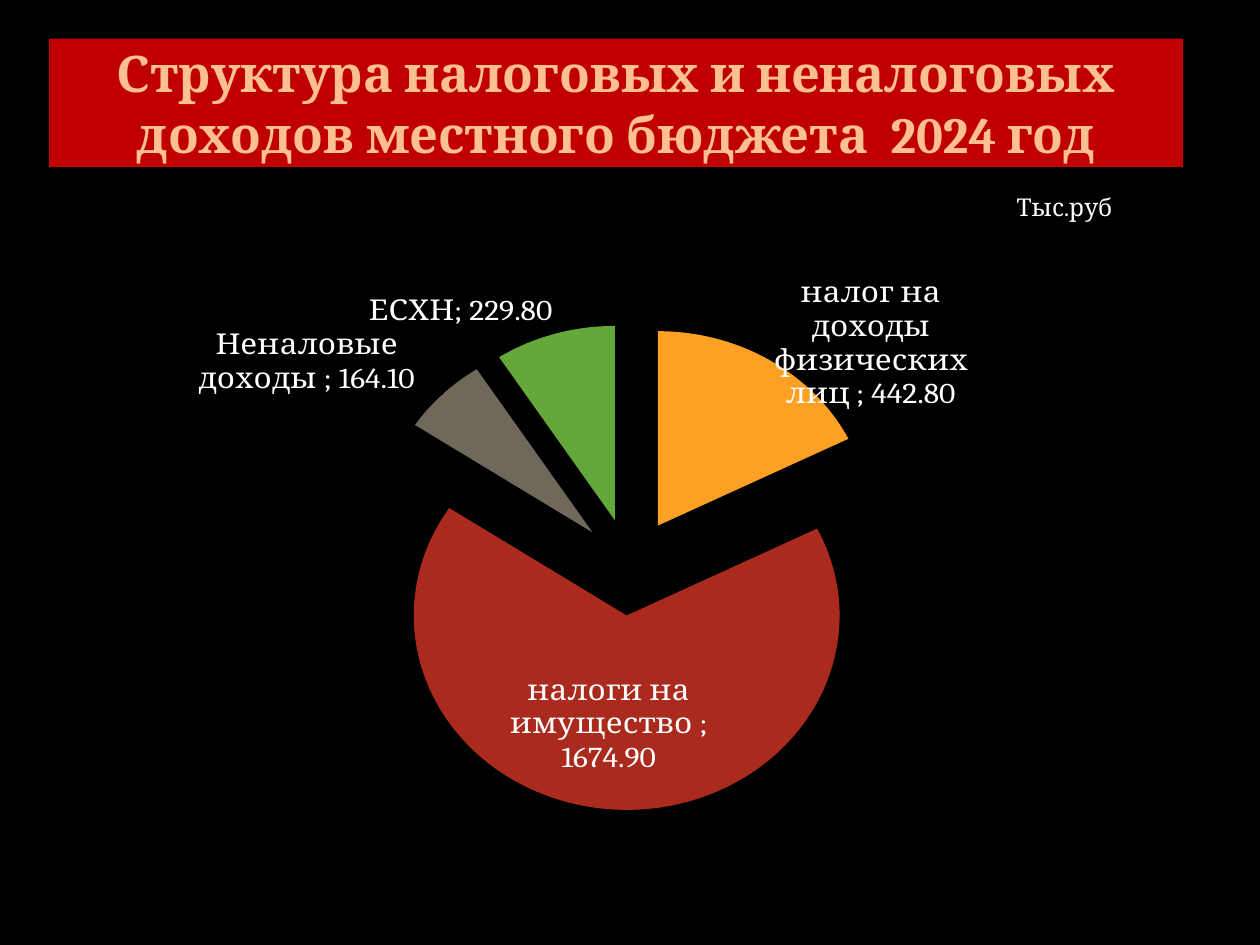
from typing import NamedTuple

from lxml.etree import SubElement
from pptx import Presentation
from pptx.chart.data import CategoryChartData
from pptx.dml.color import RGBColor
from pptx.enum.chart import XL_CHART_TYPE as ChartType, XL_LABEL_POSITION as LabelPosition
from pptx.enum.text import MSO_ANCHOR as Anchor, PP_ALIGN as Align
from pptx.oxml.ns import qn
from pptx.util import Inches, Pt

WIDTH, HEIGHT = Inches(10), Inches(7.5)
FONT = "Cambria"
NUMBER_FORMAT = "0.00"
EXPLOSION = 25
COLORS = {
    "background": "000000",
    "banner": "C00000",
    "title": "FFC091",
    "text": "FFFFFF",
    "income": "FDA023",
    "property": "AA2B1E",
    "non_tax": "71685C",
    "farm": "64A73B",
}


class Area(NamedTuple):
    """A rectangle in shares of the slide's size."""
    left: float
    top: float
    width: float
    height: float

    def emu(self) -> tuple[int, ...]:
        return tuple(round(share * side) for share, side in zip(self, (WIDTH, HEIGHT) * 2))


class Slice(NamedTuple):
    name: str
    value: float
    color: str
    position: LabelPosition
    shift: tuple[float, float]


BANNER = Area(0.039, 0.041, 0.9, 0.136)
UNIT = Area(0.797, 0.197, 0.133, 0.045)
CHART = Area(0.05, 0.233, 0.9, 0.687)
PLOT = {"x": 0.08, "y": 0.08, "w": 0.84, "h": 0.82}
OUTSIDE, CENTER = LabelPosition.OUTSIDE_END, LabelPosition.CENTER
SLICES = [
    Slice("налог на доходы физических лиц ", 442.8, "income", OUTSIDE, (0, 0.07)),
    Slice("налоги на имущество ", 1674.9, "property", CENTER, (-0.01, 0.02)),
    Slice("Неналовые доходы ", 164.1, "non_tax", OUTSIDE, (-0.02, 0.01)),
    Slice("ЕСХН", 229.8, "farm", OUTSIDE, (0, 0)),
]


def color(name: str) -> RGBColor:
    return RGBColor.from_string(COLORS[name])


def style_font(font, *, size: float, ink: str = "text", bold: bool = False) -> None:
    font.name, font.size, font.bold = FONT, Pt(size), bold
    font.color.rgb = color(ink)


def write(shape, text: str, *, size: float, ink: str = "text", bold: bool = False,
          align: Align = Align.LEFT, anchor: Anchor = Anchor.TOP) -> None:
    frame = shape.text_frame
    frame.word_wrap, frame.vertical_anchor = True, anchor
    para = frame.paragraphs[0]
    para.alignment = align
    span = para.add_run()
    span.text = text
    style_font(span.font, size=size, ink=ink, bold=bold)


def add_xml(parent, tag: str, index: int | None = None, text: str | None = None, **attributes: str):
    child = SubElement(parent, qn(tag), attributes)
    child.text = text
    if index is not None:
        parent.insert(index, child)
    return child


def add_layout(parent, index: int, **shares: float) -> None:
    """Place a chart part by shares of the chart's size."""
    for old in parent.findall(qn("c:layout")):
        parent.remove(old)
    manual = add_xml(add_xml(parent, "c:layout", index), "c:manualLayout")
    if "w" in shares:
        add_xml(manual, "c:layoutTarget", val="inner")
        for mode in ("xMode", "yMode"):
            add_xml(manual, f"c:{mode}", val="edge")
    for name, share in shares.items():
        add_xml(manual, f"c:{name}", val=str(share))


def show_name_and_value(labels) -> None:
    """Show category and value, split by a semicolon."""
    for tag in ("c:showCatName", "c:showVal"):
        labels.find(qn(tag)).set("val", "1")
    last_flag = labels.find(qn("c:showBubbleSize"))
    separator = add_xml(labels, "c:separator", text="; ")
    last_flag.addnext(separator)


def label_slice(point, piece: Slice, labels) -> None:
    label = point.data_label
    style_font(label.font, size=18)
    label.position = piece.position
    element = labels.find(f"{qn('c:dLbl')}[last()]")
    add_layout(element, 1, x=piece.shift[0], y=piece.shift[1])
    add_xml(element, "c:numFmt", 2, formatCode=NUMBER_FORMAT, sourceLinked="0")
    show_name_and_value(element)


def add_pie(slide) -> None:
    data = CategoryChartData(number_format=NUMBER_FORMAT)
    data.categories = [piece.name for piece in SLICES]
    data.add_series("Series 1", [piece.value for piece in SLICES])
    chart = slide.shapes.add_chart(ChartType.PIE, *CHART.emu(), data).chart
    chart.has_legend = chart.has_title = False
    style_font(chart.font, size=18)
    plot = chart.plots[0]
    plot.vary_by_categories = True
    add_layout(chart.element.find(f".//{qn('c:plotArea')}"), 0, **PLOT)

    series = plot.series[0]
    explosion = add_xml(series.format.fill and series._element, "c:explosion", val=str(EXPLOSION))
    series._element.find(qn("c:spPr")).addnext(explosion)
    labels = series.data_labels
    labels.number_format, labels.number_format_is_linked = NUMBER_FORMAT, False
    style_font(labels.font, size=18)
    group = series._element.find(qn("c:dLbls"))
    show_name_and_value(group)
    for index, piece in enumerate(SLICES):
        point = series.points[index]
        point.format.fill.solid()
        point.format.fill.fore_color.rgb = color(piece.color)
        label_slice(point, piece, group)


def main() -> None:
    deck = Presentation()
    deck.slide_width, deck.slide_height = WIDTH, HEIGHT
    slide = deck.slides.add_slide(deck.slide_layouts.get_by_name("Title Only"))
    slide.background.fill.solid()
    slide.background.fill.fore_color.rgb = color("background")

    title = slide.shapes.title
    title.left, title.top, title.width, title.height = BANNER.emu()
    title.fill.solid()
    title.fill.fore_color.rgb = color("banner")
    write(title, "Структура налоговых и неналоговых доходов местного бюджета  2024 год",
          size=28.8, ink="title", bold=True, align=Align.CENTER, anchor=Anchor.MIDDLE)

    add_pie(slide)
    write(slide.shapes.add_textbox(*UNIT.emu()), "Тыс.руб", size=14)
    deck.save("out.pptx")


if __name__ == "__main__":
    main()
